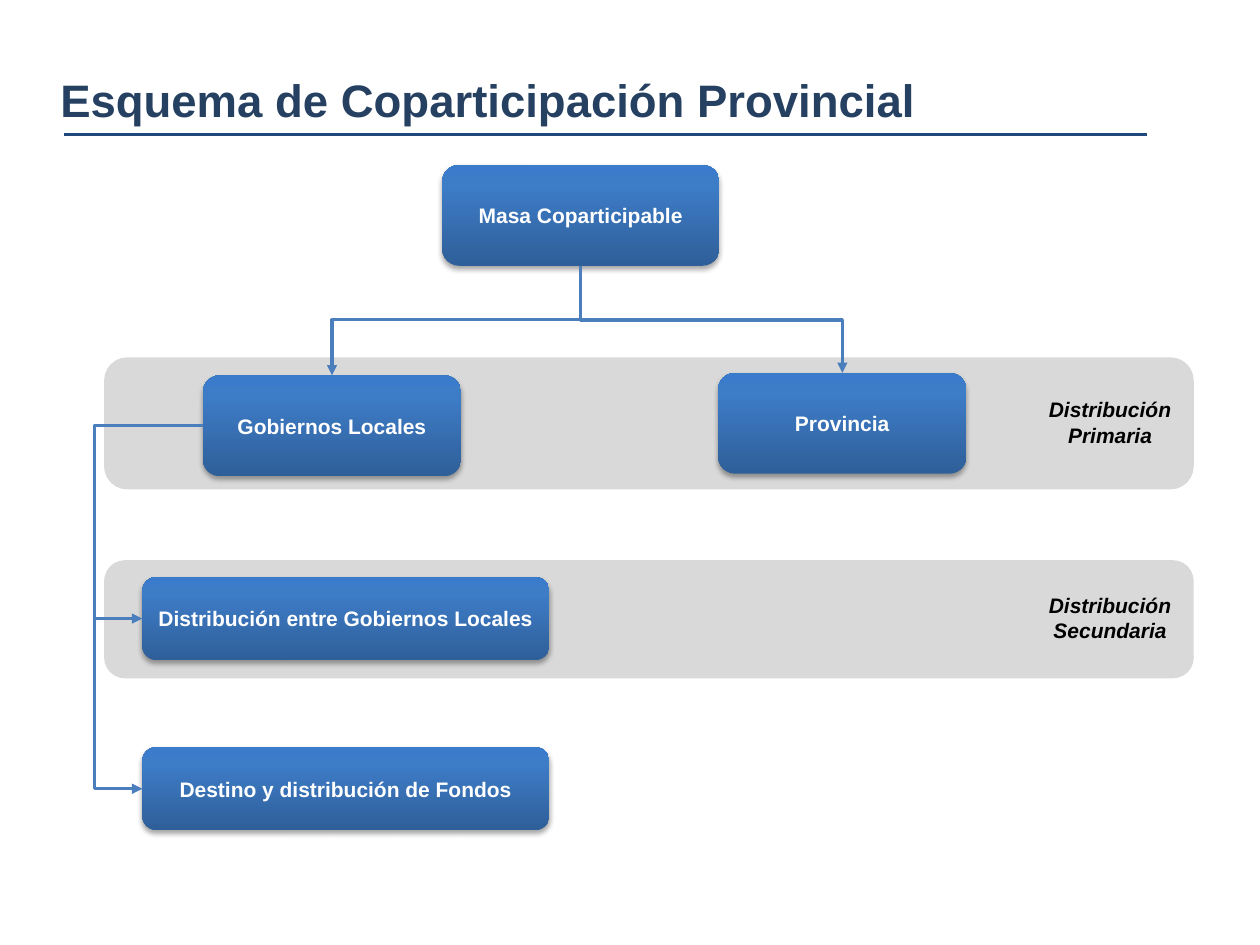
from lxml.etree import SubElement
from pptx import Presentation
from pptx.dml.color import RGBColor
from pptx.enum.shapes import MSO_CONNECTOR, MSO_SHAPE
from pptx.enum.text import MSO_ANCHOR, MSO_AUTO_SIZE, PP_ALIGN
from pptx.oxml import parse_xml
from pptx.oxml.ns import nsdecls, qn
from pptx.util import Inches, Pt

NAVY = RGBColor(0x25, 0x40, 0x61)
RULE_BLUE = RGBColor(0x1F, 0x49, 0x7D)
ARROW_BLUE = RGBColor(0x4B, 0x7E, 0xBC)
BAND_GRAY = RGBColor(0xD9, 0xD9, 0xD9)
WHITE = RGBColor(0xFF, 0xFF, 0xFF)
BLACK = RGBColor(0, 0, 0)
GRADIENT = (
    (0, RGBColor(0x2F, 0x5F, 0x99)),
    (80, RGBColor(0x3D, 0x7C, 0xC7)),
    (100, RGBColor(0x3A, 0x7C, 0xCB)),
)
COLUMNS, ROWS = 100, 75


class SchemeSlide:
    font_name = "Arial"
    body_size = 12

    def __init__(self, presentation):
        self.slide = presentation.slides.add_slide(presentation.slide_layouts[6])
        self.column = presentation.slide_width / COLUMNS
        self.row = presentation.slide_height / ROWS

    def place(self, left, top, width, height):
        return (round(left * self.column), round(top * self.row),
                round(width * self.column), round(height * self.row))

    def add_text(self, shape, text, size, color, align, anchor, italic=False):
        frame = shape.text_frame
        frame.word_wrap = True
        frame.vertical_anchor = anchor
        paragraph = frame.paragraphs[0]
        paragraph.alignment = align
        run = paragraph.add_run()
        run.text = text
        run.font.name = self.font_name
        run.font.size = Pt(size)
        run.font.bold = True
        run.font.italic = italic
        run.font.color.rgb = color

    def text_box(self, *area):
        shape = self.slide.shapes.add_textbox(*self.place(*area))
        shape.text_frame.auto_size = MSO_AUTO_SIZE.SHAPE_TO_FIT_TEXT
        return shape

    def title(self, text, *area):
        self.add_text(self.text_box(*area), text, 26, NAVY, PP_ALIGN.LEFT, MSO_ANCHOR.TOP)

    def label(self, text, *area):
        self.add_text(self.text_box(*area), text, self.body_size, BLACK,
                      PP_ALIGN.CENTER, MSO_ANCHOR.MIDDLE, italic=True)

    def rounded(self, *area):
        shape = self.slide.shapes.add_shape(MSO_SHAPE.ROUNDED_RECTANGLE, *self.place(*area))
        shape.shadow.inherit = False
        return shape

    def band(self, *area):
        shape = self.rounded(*area)
        shape.fill.solid()
        shape.fill.fore_color.rgb = BAND_GRAY
        shape.line.color.rgb = BAND_GRAY
        shape.line.width = Pt(2)

    def box(self, text, *area, side_inset=0.04):
        shape = self.rounded(*area)
        shape.line.fill.background()
        stops = "".join(
            f'<a:gs pos="{position * 1000}"><a:srgbClr val="{color}"/></a:gs>'
            for position, color in GRADIENT)
        properties = shape._element.spPr
        properties.find(qn("a:prstGeom")).addnext(parse_xml(
            f'<a:gradFill {nsdecls("a")} rotWithShape="1"><a:gsLst>{stops}</a:gsLst>'
            '<a:lin ang="16200000" scaled="0"/></a:gradFill>'))
        properties.find(qn("a:effectLst")).append(parse_xml(
            f'<a:outerShdw {nsdecls("a")} blurRad="{Pt(3.1)}" dist="{Pt(1.8)}" '
            'dir="5400000" rotWithShape="0"><a:srgbClr val="000000">'
            '<a:alpha val="35000"/></a:srgbClr></a:outerShdw>'))
        frame = shape.text_frame
        frame.margin_left = frame.margin_right = Inches(side_inset)
        self.add_text(shape, text, self.body_size, WHITE, PP_ALIGN.CENTER, MSO_ANCHOR.MIDDLE)
        return shape

    def connector(self, kind, begin, end, color, width):
        connector = self.slide.shapes.add_connector(
            kind, *(round(value) for value in (*begin, *end)))
        connector.line.color.rgb = color
        connector.line.width = Pt(width)
        SubElement(connector._element.spPr, qn("a:effectLst"))
        return connector

    def rule(self, left, right, top):
        self.connector(MSO_CONNECTOR.STRAIGHT, (left * self.column, top * self.row),
                       (right * self.column, top * self.row), RULE_BLUE, 1.5)

    def elbow(self, begin, end, bend):
        connector = self.connector(MSO_CONNECTOR.ELBOW, begin, end, ARROW_BLUE, 1.75)
        properties = connector._element.spPr
        SubElement(properties.find(qn("a:ln")), qn("a:tailEnd"), type="triangle")
        guides = properties.find(qn("a:prstGeom")).get_or_add_avLst()
        SubElement(guides, qn("a:gd"), name="adj1", fmla=f"val {round(bend * 100000)}")
        return connector

    def branch_down(self, parent, child, bend_row):
        start_x, start_y = parent.left + parent.width / 2, parent.top + parent.height
        end_x, end_y = child.left + child.width / 2, child.top
        center_x, center_y = (start_x + end_x) / 2, (start_y + end_y) / 2
        drop, reach = end_y - start_y, abs(end_x - start_x)
        leftward = end_x < start_x
        half = drop / 2 if leftward else -drop / 2
        connector = self.elbow((center_x - half, center_y - reach / 2),
                               (center_x + half, center_y + reach / 2),
                               (bend_row * self.row - start_y) / drop)
        connector._element.spPr.find(qn("a:xfrm")).set(
            "rot", str((90 if leftward else 270) * 60000))

    def branch_side(self, parent, child, bend_column):
        begin = parent.left, parent.top + parent.height / 2
        end = child.left, child.top + child.height / 2
        self.elbow(begin, end, (begin[0] - bend_column * self.column) / (begin[0] - end[0]))


def main():
    presentation = Presentation()
    presentation.slide_width = Inches(10)
    presentation.slide_height = Inches(7.5)
    scheme = SchemeSlide(presentation)

    scheme.rule(5.1, 91, 10.7)
    scheme.title("Esquema de Coparticipación Provincial", 3.8, 5.2, 88.2, 5.4)
    for top, height, text, label_top in (
        (44.6, 9.1, "Distribución Secundaria", 46.5),
        (28.5, 10.2, "Distribución Primaria", 31),
    ):
        scheme.band(8.4, top, 86.2, height)
        scheme.label(text, 81.2, label_top, 13.8, 5)

    total = scheme.box("Masa Coparticipable", 35.1, 13.1, 22, 8, side_inset=0.1)
    province = scheme.box("Provincia", 57, 29.6, 19.7, 8, side_inset=0.1)
    local = scheme.box("Gobiernos Locales", 16.1, 29.8, 20.5, 8)
    for child in (local, province):
        scheme.branch_down(total, child, 25.4)

    for text, top in (
        ("Distribución entre Gobiernos Locales", 45.8),
        ("Destino y distribución de Fondos", 59.3),
    ):
        step = scheme.box(text, 11.3, top, 32.3, 6.6)
        scheme.branch_side(local, step, 7.5)

    presentation.save("out.pptx")


if __name__ == "__main__":
    main()
